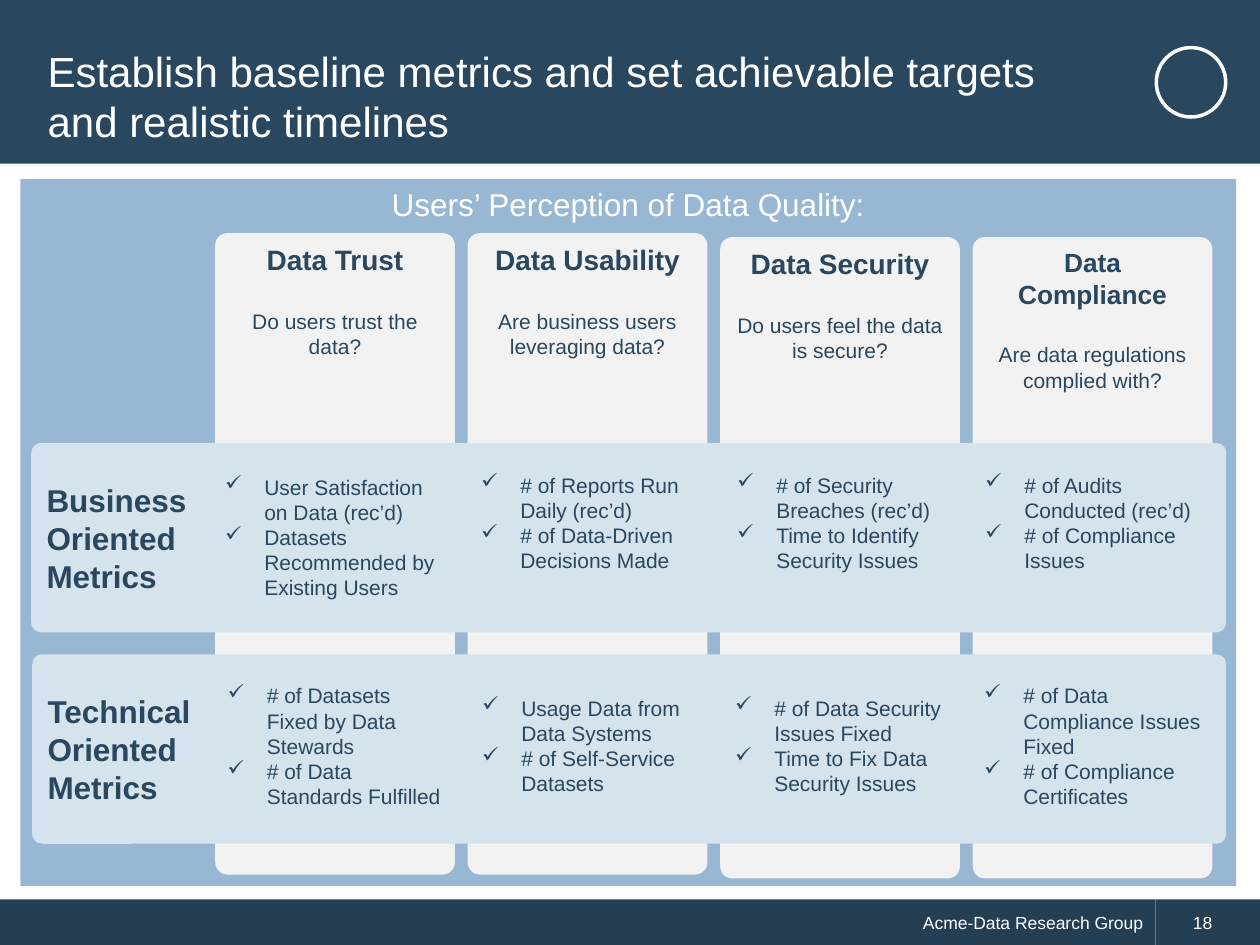
from dataclasses import dataclass

from lxml.etree import SubElement
from pptx import Presentation
from pptx.dml.color import RGBColor
from pptx.enum.shapes import MSO_SHAPE as Preset
from pptx.enum.text import MSO_ANCHOR as Anchor, PP_ALIGN as Align
from pptx.oxml.ns import qn
from pptx.util import Cm, Pt

COLORS = {
    "navy": "29475F",
    "footer": "243F54",
    "panel": "97B7D2",
    "column": "F2F2F2",
    "band": "D5E3ED",
    "white": "FFFFFF",
}
FONT = "Arial"
COLUMN_LEFT, COLUMN_PITCH, COLUMN_WIDTH, COLUMN_HEIGHT = 4.34, 5.09, 4.83, 12.93
METRICS_WIDTH = 4.88
HANGING = Cm(0.79)
EMPTY_LINE = Cm(0.57)


@dataclass(frozen=True)
class Box:
    left: float
    top: float
    width: float
    height: float

    def lengths(self) -> tuple:
        return Cm(self.left), Cm(self.top), Cm(self.width), Cm(self.height)


@dataclass(frozen=True)
class Theme:
    heading: str
    question: str
    top: float
    size: int = 16


@dataclass(frozen=True)
class Metrics:
    box: Box
    items: tuple
    raised: bool = True


@dataclass(frozen=True)
class Band:
    box: Box
    label: tuple
    metrics: tuple


THEMES = (
    Theme("Data Trust", "Do users trust the data?", 4.7),
    Theme("Data Usability", "Are business users leveraging data?", 4.7),
    Theme("Data Security", "Do users feel the data is secure?", 4.78),
    Theme("Data Compliance", "Are data regulations complied with?", 4.78, 15),
)

BANDS = (
    Band(Box(0.63, 8.93, 24.09, 3.82), ("Business", "Oriented", "Metrics"), (
        Metrics(Box(4.29, 9.42, METRICS_WIDTH, 2.82), (
            "User Satisfaction on Data (rec’d)",
            "Datasets Recommended by Existing Users"), raised=False),
        Metrics(Box(9.45, 9.37, METRICS_WIDTH, 2.9), (
            "# of Reports Run Daily (rec’d)",
            "# of Data-Driven Decisions Made")),
        Metrics(Box(14.61, 9.37, METRICS_WIDTH, 2.9), (
            "# of Security Breaches (rec’d)",
            "Time to Identify Security Issues")),
        Metrics(Box(19.61, 9.37, METRICS_WIDTH, 2.9), (
            "# of Audits Conducted (rec’d)",
            "# of Compliance Issues")),
    )),
    Band(Box(0.65, 13.19, 24.07, 3.82), ("Technical", "Oriented", "Metrics"), (
        Metrics(Box(4.34, 13.61, METRICS_WIDTH, 3.43), (
            "# of Datasets Fixed by Data Stewards",
            "# of Data Standards Fulfilled")),
        Metrics(Box(9.47, 13.87, METRICS_WIDTH, 2.9), (
            "Usage Data from Data Systems",
            "# of Self-Service Datasets")),
        Metrics(Box(14.57, 13.87, METRICS_WIDTH, 2.9), (
            "# of Data Security Issues Fixed",
            "Time to Fix Data Security Issues")),
        Metrics(Box(19.59, 13.61, METRICS_WIDTH, 3.43), (
            "# of Data Compliance Issues Fixed",
            "# of Compliance Certificates")),
    )),
)


def rgb(color: str) -> RGBColor:
    return RGBColor.from_string(COLORS[color])


def add_block(slide, box: Box, fill: str, preset=Preset.RECTANGLE, rounding: float = 0):
    block = slide.shapes.add_shape(preset, *box.lengths())
    block.shadow.inherit = False
    block.fill.solid()
    block.fill.fore_color.rgb = rgb(fill)
    block.line.fill.background()
    if rounding:
        block.adjustments[0] = rounding
    return block


def write(shape, lines: tuple, size: float, color: str, bold: bool = False,
          align=Align.LEFT, anchor=Anchor.MIDDLE):
    frame = shape.text_frame
    frame.word_wrap = True
    frame.vertical_anchor = anchor
    frame.text = "\n".join(lines)
    for paragraph in frame.paragraphs:
        paragraph.alignment = align
        for run in paragraph.runs:
            run.font.name = FONT
            run.font.size = Pt(size)
            run.font.bold = bold
            run.font.color.rgb = rgb(color)
    return frame


def add_theme(slide, theme: Theme, index: int) -> None:
    box = Box(COLUMN_LEFT + index * COLUMN_PITCH, theme.top, COLUMN_WIDTH, COLUMN_HEIGHT)
    column = add_block(slide, box, "column", Preset.ROUNDED_RECTANGLE, 0.05)
    frame = write(column, (theme.heading, theme.question), theme.size, "navy",
                  bold=True, align=Align.CENTER, anchor=Anchor.TOP)
    question = frame.paragraphs[1]
    question.space_before = Pt(18.4)
    question.runs[0].font.size = Pt(12)
    question.runs[0].font.bold = False


def add_metrics(slide, metrics: Metrics) -> None:
    checklist = slide.shapes.add_textbox(*metrics.box.lengths())
    frame = write(checklist, metrics.items, 12, "navy")
    if metrics.raised:
        frame.margin_bottom += EMPTY_LINE
    for paragraph in frame.paragraphs:
        properties = paragraph._p.get_or_add_pPr()
        properties.set("marL", str(HANGING))
        properties.set("indent", str(-HANGING))
        SubElement(properties, qn("a:buChar")).set("char", "✓")


def add_band(slide, band: Band) -> None:
    strip = add_block(slide, band.box, "band", Preset.ROUNDED_RECTANGLE, 0.053)
    write(strip, band.label, 18, "navy", bold=True)


def add_frame(slide) -> None:
    publisher = add_block(slide, Box(0, 18.13, 23.29, 0.93), "footer")
    write(publisher, ("Acme-Data Research Group",), 10, "white", align=Align.RIGHT)
    page = add_block(slide, Box(23.29, 18.13, 2.11, 0.93), "footer")
    write(page, ("18",), 10, "white").margin_left = Cm(0.76)

    add_block(slide, Box(0, 0, 25.4, 3.3), "navy")
    ring = add_block(slide, Box(23.31, 0.96, 1.4, 1.4), "navy", Preset.OVAL)
    ring.line.color.rgb = rgb("white")
    ring.line.width = Pt(2)

    title = slide.shapes.add_textbox(*Box(0.71, 0.71, 23.95, 2.44).lengths())
    headline = "Establish baseline metrics and set achievable targets \vand realistic timelines"
    write(title, (headline,), 24, "white")


def main() -> None:
    deck = Presentation()
    deck.slide_width, deck.slide_height = Cm(25.4), Cm(19.05)
    slide = deck.slides.add_slide(deck.slide_layouts[6])

    add_frame(slide)
    panel = add_block(slide, Box(0.41, 3.61, 24.51, 14.25), "panel")
    write(panel, ("Users’ Perception of Data Quality:",), 18, "white",
          align=Align.CENTER, anchor=Anchor.TOP)
    for index, theme in enumerate(THEMES):
        add_theme(slide, theme, index)
    for band in BANDS:
        add_band(slide, band)
        for metrics in band.metrics:
            add_metrics(slide, metrics)

    deck.save("out.pptx")


if __name__ == "__main__":
    main()
